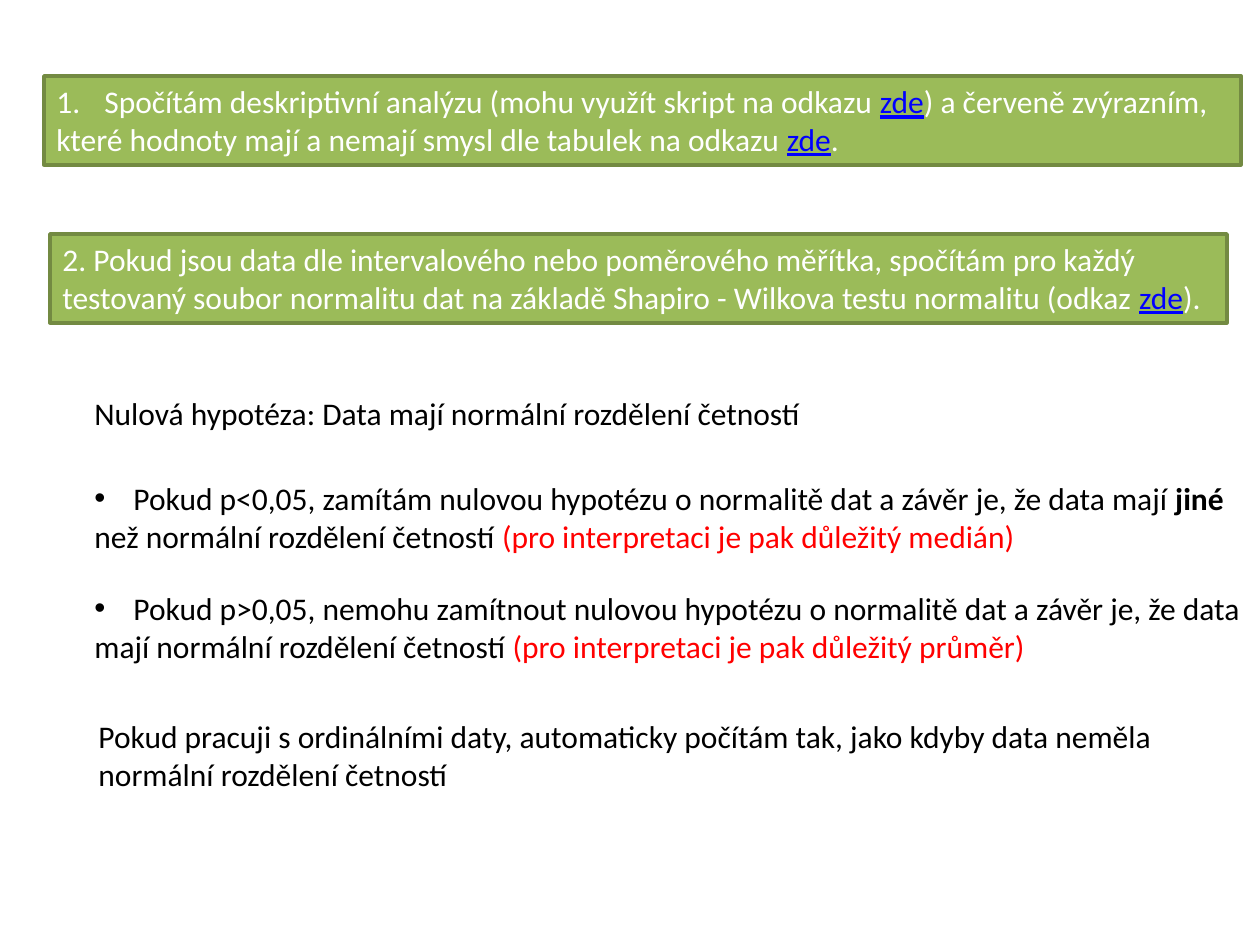
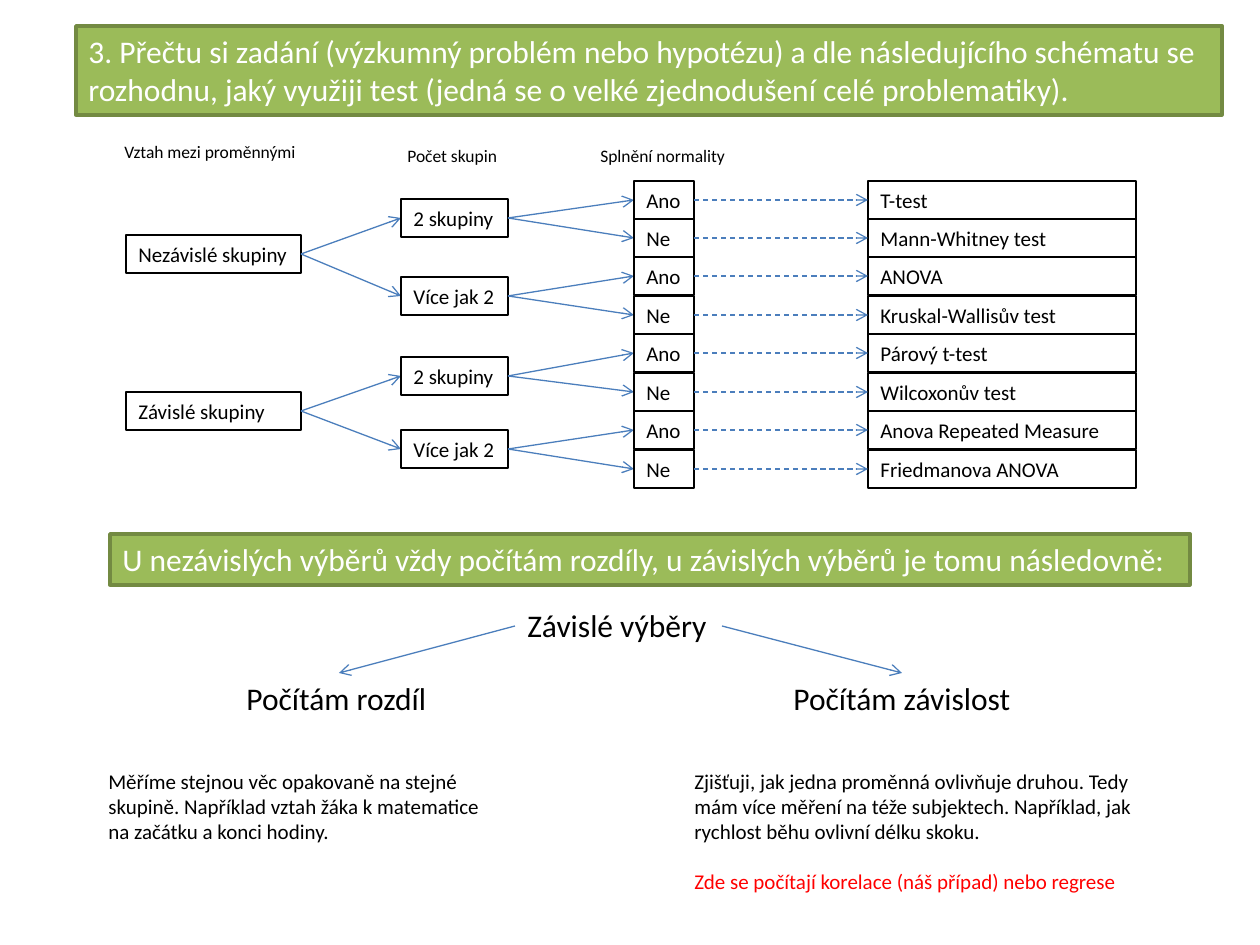
from lxml import etree
from pptx import Presentation
from pptx.dml.color import RGBColor
from pptx.enum import dml, shapes, text
from pptx.oxml import ns
from pptx.util import Pt

SCALE = 914400 / 126  # EMU in one px
FONT = "Calibri"
BLACK = RGBColor(0, 0, 0)
WHITE = RGBColor(255, 255, 255)
GREEN = RGBColor(0x9B, 0xBB, 0x59)
OLIVE = RGBColor(0x73, 0x8A, 0x42)
BLUE = RGBColor(0x4B, 0x7E, 0xBC)
LINK = RGBColor(0, 0, 255)
RED = RGBColor(255, 0, 0)

# Run formats
HERE = ("zde", {"color": LINK, "underline": True})
BOLD = {"bold": True}
ALERT = {"color": RED}

# Decision scheme
ROOTS = [(235, "Nezávislé skupiny", True), (392, "Závislé skupiny", False)]
GROUPS = [(199, "2 skupiny"), (277, "Více jak 2"),
          (357, "2 skupiny"), (430, "Více jak 2")]
TESTS = ["T-test", "Mann-Whitney test", "ANOVA", "Kruskal-Wallisův test",
         "Párový t-test", "Wilcoxonův test", "Anova Repeated Measure",
         "Friedmanova ANOVA"]
HEADS = [(112, 135, 200, "Vztah mezi proměnnými"),
         (395, 139, 117, "Počet skupin"),
         (588, 139, 151, "Splnění normality")]
ROOT_X, ROOT_W = 126, 175
GROUP_X, GROUP_W = 401, 107
NORM_X, NORM_W = 634, 60
TEST_X, TEST_W = 868, 268
CELL_H = 38


def px(num):
    return round(num * SCALE)


def set_all(item, form):
    for key, val in form.items():
        if key == "color":
            item.color.rgb = val
        else:
            setattr(item, key, val)


def add_mark(para, mark, dent):
    """Give a paragraph a bullet, or a number when mark ends in a dot."""
    props = para._p.get_or_add_pPr()
    props.set("marL", str(px(dent)))
    props.set("indent", str(-px(dent)))
    if mark == "1.":
        etree.SubElement(props, ns.qn("a:buAutoNum"), type="arabicPeriod")
    else:
        etree.SubElement(props, ns.qn("a:buFont"), typeface="Arial")
        etree.SubElement(props, ns.qn("a:buChar"), char=mark)


def write(shape, lines, size, color=BLACK, wrap=False, mark=None):
    """Each line is a paragraph: a string or a list of runs."""
    frame = shape.text_frame
    set_all(frame, {"word_wrap": wrap,
                    "vertical_anchor": text.MSO_ANCHOR.TOP,
                    "auto_size": text.MSO_AUTO_SIZE.SHAPE_TO_FIT_TEXT})
    for num, line in enumerate(lines):
        para = frame.add_paragraph() if num else frame.paragraphs[0]
        para.alignment = text.PP_ALIGN.LEFT
        if mark and num == 0:
            add_mark(para, *mark)
        for part in [line] if isinstance(line, str) else line:
            words, form = (part, {}) if isinstance(part, str) else part
            run = para.add_run()
            run.text = words
            base = {"name": FONT, "size": Pt(size), "color": color}
            set_all(run.font, {**base, **form})
    return frame


def add_note(slide, x, y, w, h, lines, size=18, **opts):
    box = slide.shapes.add_textbox(*map(px, (x, y, w, h)))
    return write(box, lines, size, **opts)


def add_box(slide, x, y, w, h, lines, size=12, fill=WHITE, edge=BLACK,
            width=0.75, **opts):
    box = slide.shapes.add_shape(shapes.MSO_SHAPE.RECTANGLE,
                                 *map(px, (x, y, w, h)))
    box.shadow.inherit = False
    box.fill.solid()
    box.fill.fore_color.rgb = fill
    set_all(box.line, {"color": edge, "width": Pt(width)})
    write(box, lines, size, **opts)


def add_band(slide, x, y, w, lines, **opts):
    add_box(slide, x, y, w, 38 * len(lines) + 13, lines, size=18, fill=GREEN,
            edge=OLIVE, width=2, color=WHITE, **opts)


def add_arrow(slide, x1, y1, x2, y2, dash=False):
    line = slide.shapes.add_connector(shapes.MSO_CONNECTOR.STRAIGHT,
                                      *map(px, (x1, y1, x2, y2)))
    set_all(line.line, {"color": BLUE, "width": Pt(0.75)})
    if dash:
        line.line.dash_style = dml.MSO_LINE.DASH
    etree.SubElement(line.line._get_or_add_ln(), ns.qn("a:tailEnd"),
                     type="arrow")
    etree.SubElement(line._element.spPr, ns.qn("a:effectLst"))


def row_top(num):
    return 181 + 269 * num // 7


def add_fan(slide, x1, y, x2, ends):
    for end in ends:
        add_arrow(slide, x1, y + CELL_H // 2, x2, end + CELL_H // 2)


def add_scheme(slide):
    for x, y, w, head in HEADS:
        add_note(slide, x, y, w, 34, [head], size=10)

    # Roots and groups, each one forking into two
    for num, (y, name, fits) in enumerate(ROOTS):
        add_box(slide, ROOT_X, y, ROOT_W, CELL_H, [name], wrap=not fits)
        ends = [top for top, _ in GROUPS[2 * num:2 * num + 2]]
        add_fan(slide, ROOT_X + ROOT_W, y, GROUP_X, ends)
    for num, (y, name) in enumerate(GROUPS):
        add_box(slide, GROUP_X, y, GROUP_W, CELL_H, [name])
        ends = [row_top(2 * num), row_top(2 * num + 1)]
        add_fan(slide, GROUP_X + GROUP_W, y, NORM_X, ends)

    # Normality answers and the matching tests
    for num, test in enumerate(TESTS):
        y = row_top(num)
        mid = y + CELL_H // 2
        odd = num % 2 == 1
        add_box(slide, NORM_X, y, NORM_W, CELL_H, ["Ne" if odd else "Ano"],
                wrap=odd)
        add_box(slide, TEST_X, y, TEST_W, CELL_H, [test], wrap=True)
        add_arrow(slide, NORM_X + NORM_W, mid, TEST_X, mid, dash=True)


def fill_steps(slide):
    # Steps one and two
    add_band(slide, 44, 76, 1197, [
        ["Spočítám deskriptivní analýzu (mohu využít skript na odkazu ", HERE,
         ") a červeně zvýrazním,"],
        ["které hodnoty mají a nemají smysl dle tabulek na odkazu ", HERE,
         "."]], mark=("1.", 48))
    add_band(slide, 50, 234, 1177, [
        "2. Pokud jsou data dle intervalového nebo poměrového měřítka, "
        "spočítám pro každý",
        ["testovaný soubor normalitu dat na základě Shapiro - Wilkova testu "
         "normalitu (odkaz ", HERE, ")."]])

    # Null hypothesis and its outcomes
    add_note(slide, 82, 388, 747, 51,
             ["Nulová hypotéza: Data mají normální rozdělení četností"])
    add_note(slide, 82, 473, 1176, 89, [
        ["Pokud p<0,05, zamítám nulovou hypotézu o normalitě dat a závěr je, "
         "že data mají ", ("jiné", BOLD)],
        ["než normální rozdělení četností ",
         ("(pro interpretaci je pak důležitý medián)", ALERT)]],
        mark=("•", 39))
    add_note(slide, 82, 583, 1193, 89, [
        "Pokud p>0,05, nemohu zamítnout nulovou hypotézu o normalitě dat a "
        "závěr je, že data",
        ["mají normální rozdělení četností ",
         ("(pro interpretaci je pak důležitý průměr)", ALERT)]],
        mark=("•", 39))
    add_note(slide, 86, 711, 1090, 89, [
        "Pokud pracuji s ordinálními daty, automaticky počítám tak, jako "
        "kdyby data neměla",
        "normální rozdělení četností"])


def fill_choice(slide):
    # Step three
    add_band(slide, 76, 26, 1146, [
        "3. Přečtu si zadání (výzkumný problém nebo hypotézu) a dle "
        "následujícího schématu se",
        "rozhodnu, jaký využiji test (jedná se o velké zjednodušení celé "
        "problematiky)."])
    add_scheme(slide)

    # Dependent samples: difference or dependence
    add_band(slide, 110, 534, 1080, [
        "U nezávislých výběrů vždy počítám rozdíly, u závislých výběrů je "
        "tomu následovně:"])
    for x, y, w, name in [(515, 600, 207, "Závislé výběry"),
                          (234, 673, 207, "Počítám rozdíl"),
                          (781, 673, 244, "Počítám závislost")]:
        add_note(slide, x, y, w, 51, [name])
    add_arrow(slide, 515, 626, 339, 673)
    add_arrow(slide, 722, 626, 902, 673)
    add_note(slide, 96, 762, 401, 89, [
        "Měříme stejnou věc opakovaně na stejné",
        "skupině. Například vztah žáka k matematice",
        "na začátku a konci hodiny."], size=12)
    frame = add_note(slide, 682, 762, 467, 140, [
        "Zjišťuji, jak jedna proměnná ovlivňuje druhou. Tedy",
        "mám více měření na téže subjektech. Například, jak",
        "rychlost běhu ovlivní délku skoku.",
        [("Zde se počítají korelace (náš případ) nebo regrese", ALERT)]],
        size=12)
    frame.paragraphs[-1].space_before = Pt(14)


def main():
    deck = Presentation()
    set_all(deck, {"slide_width": px(1260), "slide_height": px(945)})
    for fill in (fill_steps, fill_choice):
        fill(deck.slides.add_slide(deck.slide_layouts[6]))
    deck.save("out.pptx")


if __name__ == "__main__":
    main()
